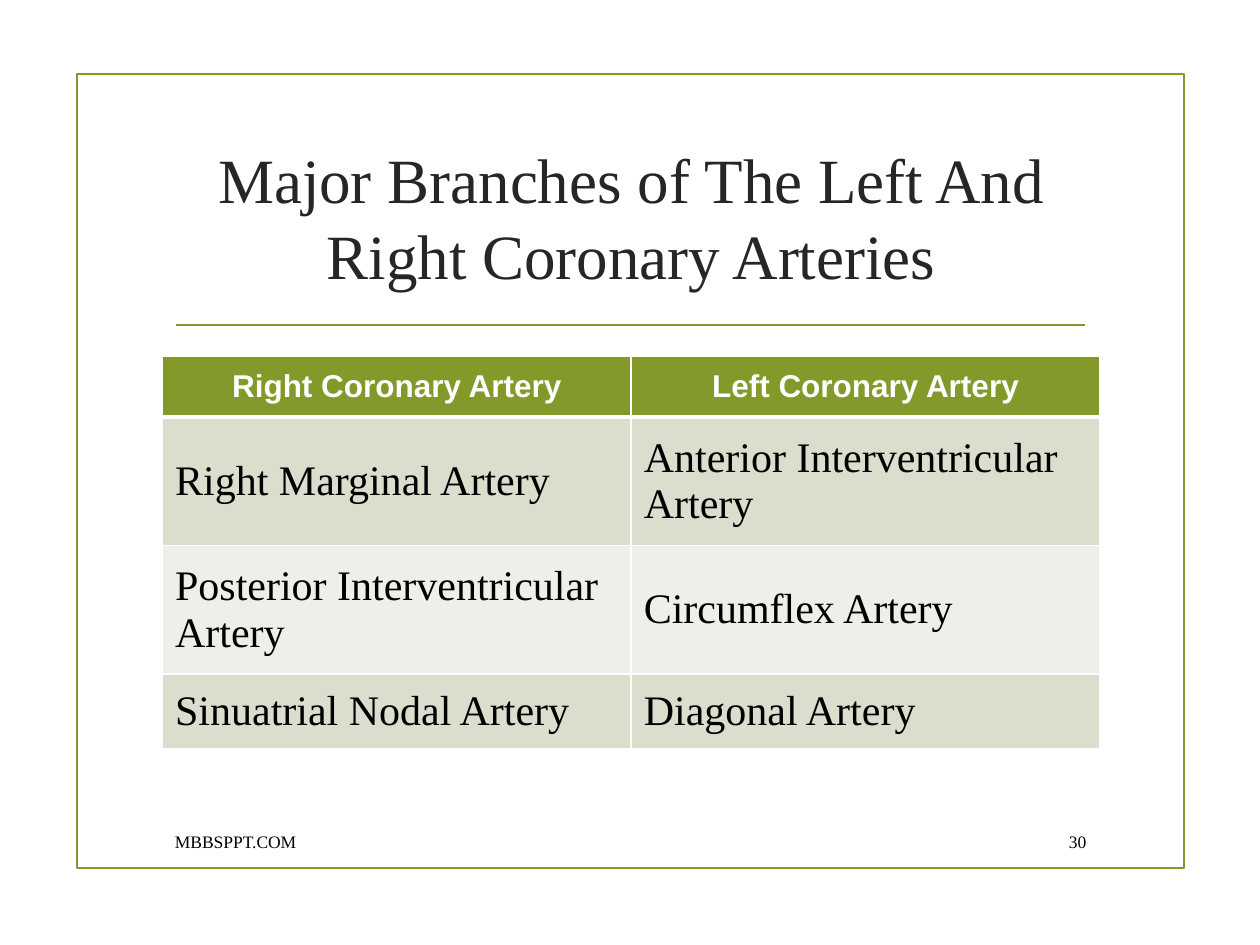
import pptx
import pptx.util
import pptx.dml.color
import pptx.enum.shapes
import pptx.enum.text
import pptx.oxml
import pptx.oxml.ns
from dataclasses import dataclass
from lxml import etree

ALIGN = pptx.enum.text.PP_ALIGN
MIDDLE = pptx.enum.text.MSO_ANCHOR.MIDDLE
Inches, Pt = pptx.util.Inches, pptx.util.Pt

TITLE = "Major Branches of The Left And Right Coronary Arteries"
ARTERIES = [
    ("Right Coronary Artery", "Left Coronary Artery"),
    ("Right Marginal Artery", "Anterior Interventricular Artery"),
    ("Posterior Interventricular Artery", "Circumflex Artery"),
    ("Sinuatrial Nodal Artery", "Diagonal Artery"),
]
ROW_HEIGHTS = [0.47, 1.02, 1.02, 0.59]
FOOTER, PAGE_NUMBER = "MBBSPPT.COM", "30"

WIDTH, HEIGHT = 10, 7.5
LEFT, CONTENT_WIDTH = 1.29, 7.44
FOOTER_TOP, FOOTER_HEIGHT = 6.52, 0.31


@dataclass(frozen=True)
class Theme:
    serif: str = "Times New Roman"
    sans: str = "Arial"
    green: str = "83992A"
    title: str = "262626"
    black: str = "000000"
    white: str = "FFFFFF"
    bands: tuple = ("D9DECD", "EDEFE8")
    title_size: int = 36
    header_size: int = 18
    body_size: int = 24
    footer_size: int = 10
    rule: float = 1.25


THEME = Theme()


def rgb(value):
    return pptx.dml.color.RGBColor.from_string(value)


def write(frame, text, size, color, font=THEME.serif, align=ALIGN.LEFT, bold=False):
    frame.word_wrap = True
    frame.text = text
    para = frame.paragraphs[0]
    para.alignment = align
    para.font.name, para.font.size, para.font.bold = font, Pt(size), bold
    para.font.color.rgb = rgb(color)


def set_outline(shape):
    shape.line.color.rgb = rgb(THEME.green)
    shape.line.width = Pt(THEME.rule)


def add_frame_and_rule(page):
    frame = page.shapes.add_shape(
        pptx.enum.shapes.MSO_SHAPE.RECTANGLE,
        Inches(0.61), Inches(0.59), Inches(8.79), Inches(6.3))
    frame.shadow.inherit = False
    frame.fill.background()
    set_outline(frame)
    rule = page.shapes.add_connector(
        pptx.enum.shapes.MSO_CONNECTOR.STRAIGHT,
        Inches(1.4), Inches(2.58), Inches(8.61), Inches(2.58))
    set_outline(rule)
    etree.SubElement(rule._element.spPr, pptx.oxml.ns.qn("a:effectLst"))


def set_borders(cell, **widths):
    """Draw white borders; sides are given as L, R, T, B in schema order."""
    properties = cell._tc.get_or_add_tcPr()
    for position, (side, width) in enumerate(widths.items()):
        properties.insert(position, pptx.oxml.parse_xml(
            f'<a:ln{side} {pptx.oxml.ns.nsdecls("a")} w="{Pt(width)}">'
            f'<a:solidFill><a:srgbClr val="{THEME.white}"/></a:solidFill></a:ln{side}>'))


def add_artery_table(page):
    columns = len(ARTERIES[0])
    table = page.shapes.add_table(
        len(ARTERIES), columns, Inches(LEFT), Inches(2.83),
        Inches(CONTENT_WIDTH), Inches(sum(ROW_HEIGHTS))).table
    for column in table.columns:
        column.width = Inches(CONTENT_WIDTH / columns)
    for r, (names, height) in enumerate(zip(ARTERIES, ROW_HEIGHTS)):
        table.rows[r].height = Inches(height)
        header = r == 0
        side_margin, end_margin = (0.19, 0.1) if header else (0.1, 0.08)
        for c, name in enumerate(names):
            cell = table.cell(r, c)
            cell.vertical_anchor = MIDDLE
            cell.margin_left = cell.margin_right = Inches(side_margin)
            cell.margin_top = cell.margin_bottom = Inches(end_margin)
            cell.fill.solid()
            cell.fill.fore_color.rgb = rgb(
                THEME.green if header else THEME.bands[(r - 1) % 2])
            set_borders(cell, L=1, R=1, T=3 if r == 1 else 1, B=3 if header else 1)
            if header:
                write(cell.text_frame, name, THEME.header_size, THEME.white,
                      THEME.sans, ALIGN.CENTER, True)
            else:
                write(cell.text_frame, name, THEME.body_size, THEME.black)


def add_footer(page, text, left, width, align):
    box = page.shapes.add_textbox(
        Inches(left), Inches(FOOTER_TOP), Inches(width), Inches(FOOTER_HEIGHT))
    box.text_frame.vertical_anchor = MIDDLE
    write(box.text_frame, text, THEME.footer_size, THEME.black, align=align)


def main():
    deck = pptx.Presentation()
    deck.slide_width, deck.slide_height = Inches(WIDTH), Inches(HEIGHT)
    page = deck.slides.add_slide(deck.slide_layouts.get_by_name("Title Only"))
    add_frame_and_rule(page)

    title = page.shapes.title
    title.left, title.top = Inches(LEFT), Inches(1)
    title.width, title.height = Inches(CONTENT_WIDTH), Inches(1.43)
    title.text_frame.auto_size = pptx.enum.text.MSO_AUTO_SIZE.NONE
    title.text_frame.vertical_anchor = MIDDLE
    write(title.text_frame, TITLE, THEME.title_size, THEME.title, align=ALIGN.CENTER)

    add_artery_table(page)
    add_footer(page, FOOTER, LEFT, 5.58, ALIGN.LEFT)
    add_footer(page, PAGE_NUMBER, 8.29, 0.43, ALIGN.RIGHT)
    deck.save("out.pptx")


if __name__ == "__main__":
    main()
